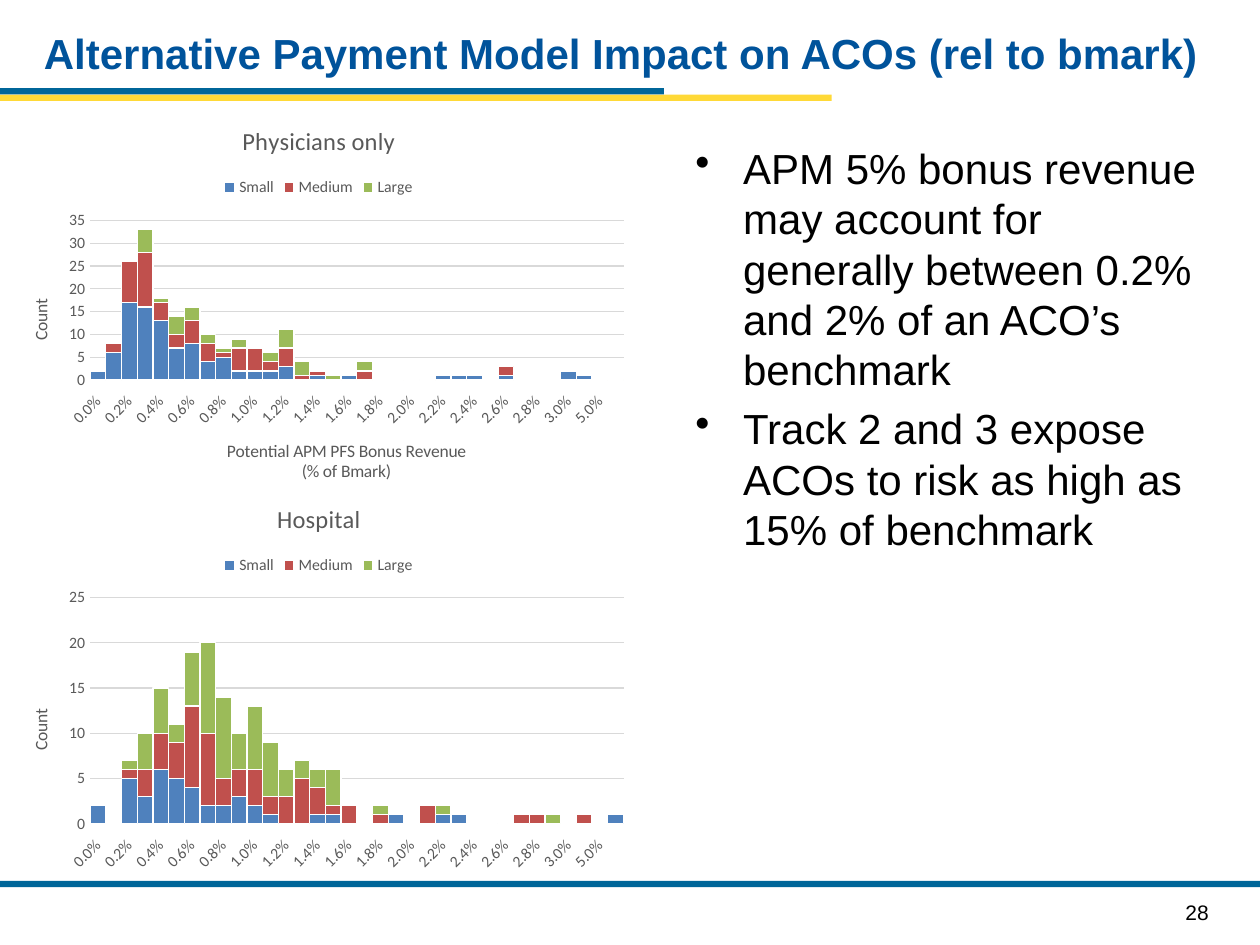
from lxml import etree
from pptx import Presentation
from pptx.chart.data import CategoryChartData
from pptx.dml.color import RGBColor
from pptx.enum.chart import XL_CHART_TYPE, XL_LEGEND_POSITION, XL_TICK_LABEL_POSITION, XL_TICK_MARK
from pptx.enum.shapes import MSO_SHAPE
from pptx.enum.text import MSO_ANCHOR
from pptx.oxml.ns import qn
from pptx.util import Inches, Pt

STACKED = XL_CHART_TYPE.COLUMN_STACKED
LEGEND_TOP = XL_LEGEND_POSITION.TOP
LABELS_LOW = XL_TICK_LABEL_POSITION.LOW
NO_TICK = XL_TICK_MARK.NONE
RECT = MSO_SHAPE.RECTANGLE
MIDDLE = MSO_ANCHOR.MIDDLE

COLORS = {
    "title": "00539B", "text": "000000", "blue": "006699", "yellow": "FFD937",
    "label": "595959", "grid": "D9D9D9", "edge": "FFFFFF",
    "Small": "4F81BD", "Medium": "C0504D", "Large": "9BBB59",
}
PERCENT = "0.0%"
BINS = [round(i / 1000, 3) for i in range(31)] + [0.04, 0.05, 0.11]
PHYSICIANS = {
    "Small": [2, 6, 17, 16, 13, 7, 8, 4, 5, 2, 2, 2, 3, 0, 1, 0, 1, 0, 0, 0, 0, 0,
              1, 1, 1, 0, 1, 0, 0, 0, 2, 1, 0, 0],
    "Medium": [0, 2, 9, 12, 4, 3, 5, 4, 1, 5, 5, 2, 4, 1, 1, 0, 0, 2, 0, 0, 0, 0,
               0, 0, 0, 0, 2, 0, 0, 0, 0, 0, 0, 0],
    "Large": [0, 0, 0, 5, 1, 4, 3, 2, 1, 2, 0, 2, 4, 3, 0, 1, 0, 2, 0, 0, 0, 0,
              0, 0, 0, 0, 0, 0, 0, 0, 0, 0, 0, 0],
}
HOSPITAL = {
    "Small": [2, 0, 5, 3, 6, 5, 4, 2, 2, 3, 2, 1, 0, 0, 1, 1, 0, 0, 0, 1, 0, 0,
              1, 1, 0, 0, 0, 0, 0, 0, 0, 0, 0, 1],
    "Medium": [0, 0, 1, 3, 4, 4, 9, 8, 3, 3, 4, 2, 3, 5, 3, 1, 2, 0, 1, 0, 0, 2,
               0, 0, 0, 0, 0, 1, 1, 0, 0, 1, 0, 0],
    "Large": [0, 0, 1, 4, 5, 2, 6, 10, 9, 4, 7, 6, 3, 2, 2, 4, 0, 0, 1, 0, 0, 0,
              1, 0, 0, 0, 0, 0, 0, 1, 0, 0, 0, 0],
}
BULLETS = [
    "APM 5% bonus revenue may account for generally between 0.2% and 2% of an ACO’s benchmark",
    "Track 2 and 3 expose ACOs to risk as high as 15% of benchmark",
]


def color(name):
    return RGBColor.from_string(COLORS[name])


def set_font(font, size, name, face="Calibri", bold=False):
    font.size = Pt(size)
    font.name = face
    font.bold = bold
    font.color.rgb = color(name)


def set_line(line, name):
    line.color.rgb = color(name)
    line.width = Pt(0.75)


def add_bar(s, x, y, w, name):
    sp = s.shapes.add_shape(RECT, Inches(x), Inches(y), Inches(w), Inches(0.05))
    sp.shadow.inherit = False
    sp.fill.solid()
    sp.fill.fore_color.rgb = color(name)
    sp.line.fill.background()


def add_text(s, x, y, w, h, text, size, name="text", bold=False):
    tf = s.shapes.add_textbox(Inches(x), Inches(y), Inches(w), Inches(h)).text_frame
    tf.word_wrap = True
    tf.text = text
    for p in tf.paragraphs:
        set_font(p.font, size, name, "Arial", bold)
    return tf


def add_bullets(s, x, y, w, h, items):
    tf = add_text(s, x, y, w, h, "\n".join(items), 24)
    for i, p in enumerate(tf.paragraphs):
        pPr = p._p.get_or_add_pPr()
        pPr.set("marL", str(Inches(0.38)))
        pPr.set("indent", str(-Inches(0.38)))
        bullet = etree.Element(qn("a:buChar"), char="•")
        pPr.insert(0, bullet)
        if i:
            p.space_before = Pt(5)


def add_title(title, text, size):
    tf = title.text_frame
    tf.text = text
    for p in tf.paragraphs:
        set_font(p.font, size, "label")
    return tf


def set_plot_area(chart, x, y, w, h):
    area = chart._chartSpace.chart.plotArea
    for old in area.findall(qn("c:layout")):
        area.remove(old)
    layout = etree.Element(qn("c:layout"))
    manual = etree.SubElement(layout, qn("c:manualLayout"))
    settings = [("layoutTarget", "inner"), ("xMode", "edge"), ("yMode", "edge"),
                ("x", x), ("y", y), ("w", w), ("h", h)]
    for tag, val in settings:
        etree.SubElement(manual, qn("c:" + tag), val=str(val))
    area.insert(0, layout)


def style_category_axis(axis):
    axis.tick_label_position = LABELS_LOW
    axis.tick_labels.number_format = PERCENT
    axis.tick_labels.number_format_is_linked = False
    set_line(axis.format.line, "grid")
    axis._element.txPr.find(qn("a:bodyPr")).set("rot", "-2700000")
    skip = etree.Element(qn("c:tickLblSkip"), val="2")
    axis._element.find(qn("c:noMultiLvlLbl")).addprevious(skip)


def style_value_axis(axis, top):
    axis.minimum_scale, axis.maximum_scale, axis.major_unit = 0, top, 5
    axis.format.line.fill.background()
    set_line(axis.major_gridlines.format.line, "grid")
    body = add_title(axis.axis_title, "Count", 10)._txBody.find(qn("a:bodyPr"))
    body.set("rot", "-5400000")
    body.set("vert", "horz")


def add_histogram(s, y, h, title, counts, top, plot_height, x_title=None):
    data = CategoryChartData()
    data.categories = BINS
    data.categories.number_format = PERCENT
    for name, values in counts.items():
        data.add_series(name, values)
    chart = s.shapes.add_chart(STACKED, Inches(0.01), Inches(y), Inches(5.04), Inches(h), data).chart
    set_font(chart.font, 10, "text")
    add_title(chart.chart_title, title, 14)
    chart.has_legend = True
    chart.legend.position = LEGEND_TOP
    chart.legend.include_in_layout = False
    set_font(chart.legend.font, 9, "label")
    plot = chart.plots[0]
    plot.gap_width, plot.overlap = 0, 100
    plot.vary_by_categories = False
    for series in plot.series:
        series.format.fill.solid()
        series.format.fill.fore_color.rgb = color(series.name)
        set_line(series.format.line, "edge")
    for axis in (chart.category_axis, chart.value_axis):
        axis.major_tick_mark = axis.minor_tick_mark = NO_TICK
        set_font(axis.tick_labels.font, 9, "label")
    style_category_axis(chart.category_axis)
    style_value_axis(chart.value_axis, top)
    if x_title:
        add_title(chart.category_axis.axis_title, x_title, 10)
    set_plot_area(chart, 0.14, 0.29, 0.84, plot_height)


def main():
    prs = Presentation()
    prs.slide_width, prs.slide_height = Inches(10), Inches(7.5)
    s = prs.slides.add_slide(prs.slide_layouts[6])
    add_bar(s, 0, 0.75, 6.6, "yellow")
    add_bar(s, 0, 0.7, 5.27, "blue")
    add_bar(s, 0, 6.99, 10, "blue")
    add_text(s, 9.31, 7.09, 0.49, 0.3, "28", 12)
    title = add_text(s, 0.25, 0.13, 9.5, 0.57,
                     "Alternative Payment Model Impact on ACOs (rel to bmark)", 24, "title", True)
    title.vertical_anchor = MIDDLE
    add_bullets(s, 5.42, 1.08, 4.33, 5.67, BULLETS)
    add_histogram(s, 0.83, 3.17, "Physicians only", PHYSICIANS, 35, 0.4,
                  "Potential APM PFS Bonus Revenue\n(% of Bmark)")
    add_histogram(s, 3.83, 3.15, "Hospital", HOSPITAL, 25, 0.57)
    prs.save("out.pptx")


if __name__ == "__main__":
    main()
